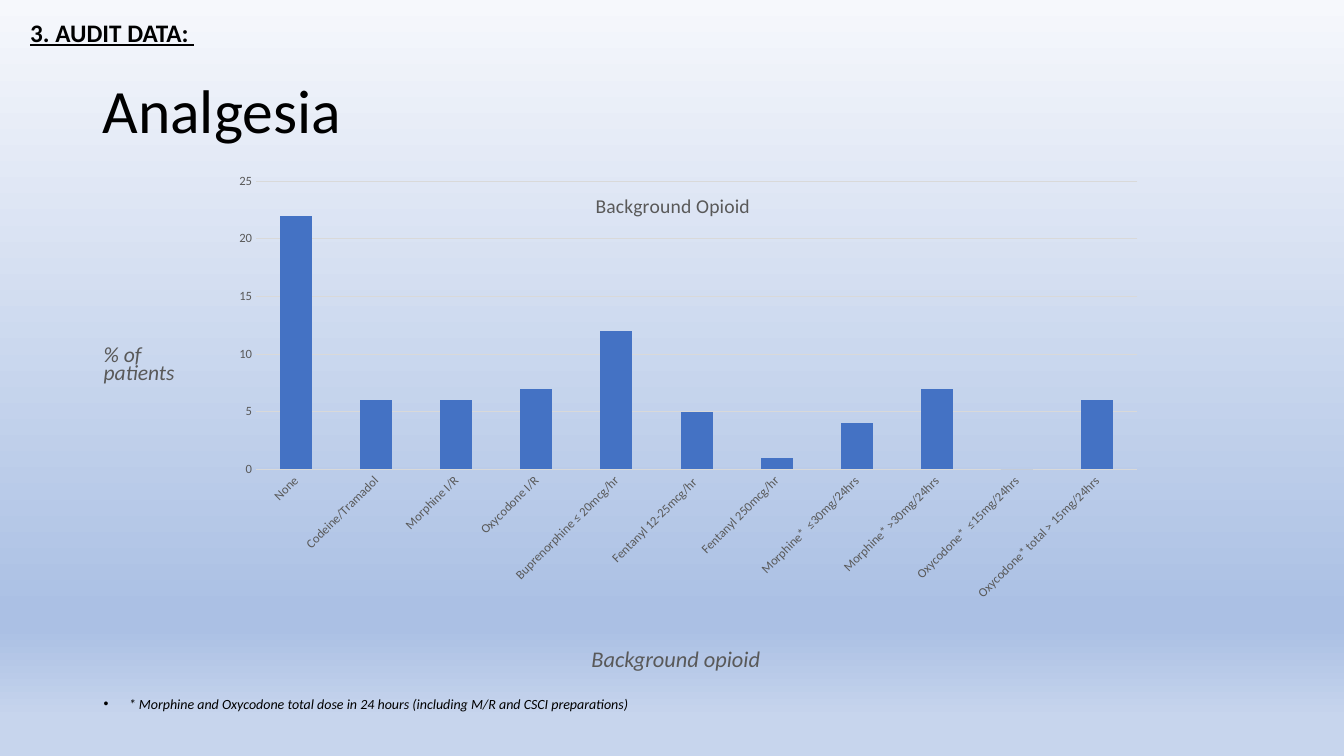
"""Build the audit data slide on background opioid analgesia."""
from lxml import etree
from pptx import Presentation
from pptx import util as u
from pptx.chart import data
from pptx.dml import color
from pptx.enum import chart as charts, text
from pptx.oxml import ns, parse_xml

FONT = "Calibri"
GREY = "595959"
PALE = "D9D9D9"


def rgb(value):
    return color.RGBColor.from_string(value)


def style(font, size, shade, italic=False, bold=False):
    font.name, font.size = FONT, u.Pt(size)
    font.italic, font.bold = italic, bold
    font.color.rgb = rgb(shade)


deck = Presentation()
deck.slide_width, deck.slide_height = u.Pt(960), u.Pt(540)
page = deck.slides.add_slide(deck.slide_layouts[6])

background = page.background.fill
background.gradient()
background.gradient_angle = 270
stops = page.element.find(".//" + ns.qn("a:gsLst"))
for stop in list(stops):
    stops.remove(stop)
for position, shade in [(0, "F6F8FC"), (81, "ABC0E4"), (83, "ABC0E4"), (95, "C7D5ED")]:
    stop = etree.SubElement(stops, ns.qn("a:gs"), pos=str(position * 1000))
    etree.SubElement(stop, ns.qn("a:srgbClr"), val=shade)

opioids = data.CategoryChartData()
opioids.categories = [
    "None", "Codeine/Tramadol", "Morphine I/R", "Oxycodone I/R",
    "Buprenorphine ≤ 20mcg/hr", "Fentanyl 12-25mcg/hr ", "Fentanyl 250mcg/hr",
    "Morphine*  ≤30mg/24hrs", "Morphine* >30mg/24hrs",
    "Oxycodone*  ≤15mg/24hrs", "Oxycodone* total > 15mg/24hrs",
]
opioids.add_series("Background Opioid", [22, 6, 6, 7, 12, 5, 1, 4, 7, 0, 6])
chart = page.shapes.add_chart(
    charts.XL_CHART_TYPE.COLUMN_STACKED,
    u.Pt(147.6), u.Pt(123.8), u.Pt(666), u.Pt(352), opioids,
).chart
style(chart.font, 10, "000000")
chart.has_legend = False
chart.has_title = True
chart.chart_title.text_frame.text = "Background Opioid"
style(chart.chart_title.text_frame.paragraphs[0].font, 14, GREY)
title_element = chart.chart_title._element
for overlay in title_element.findall(ns.qn("c:overlay")):
    overlay.set("val", "1")

plot = chart.plots[0]
plot.gap_width, plot.overlap = 150, 100
plot.vary_by_categories = False
bars = plot.series[0].format.fill
bars.solid()
bars.fore_color.rgb = rgb("4472C4")

for axis in (chart.category_axis, chart.value_axis):
    axis.major_tick_mark = axis.minor_tick_mark = charts.XL_TICK_MARK.NONE
    style(axis.tick_labels.font, 9, GREY)
chart.category_axis._element.find(".//" + ns.qn("a:bodyPr")).set("rot", "-2700000")
values = chart.value_axis
values.minimum_scale, values.maximum_scale, values.major_unit = 0, 25, 5
values.format.line.fill.background()
for line in (chart.category_axis.format.line, values.major_gridlines.format.line):
    line.color.rgb = rgb(PALE)
    line.width = u.Pt(0.75)

plot_area = chart._chartSpace.find(".//" + ns.qn("c:plotArea"))
for layout in plot_area.findall(ns.qn("c:layout")):
    plot_area.remove(layout)
plot_area.insert(0, parse_xml(
    f'<c:layout {ns.nsdecls("c")}><c:manualLayout><c:layoutTarget val="inner"/>'
    '<c:xMode val="edge"/><c:yMode val="edge"/><c:x val="0.053"/><c:y val="0.016"/>'
    '<c:w val="0.945"/><c:h val="0.585"/></c:manualLayout></c:layout>'
))

labels = [
    ("Analgesia", (66.2, 28.8, 828, 104.4), 44, "000000", False, 0.9),
    ("* Morphine and Oxycodone total dose in 24 hours (including M/R and CSCI preparations)",
     (67, 494.6, 828, 18.7), 10, "000000", True, 0.9),
    ("Background opioid", (415.4, 459.4, 164.2, 36), 16, GREY, True, 0.9),
    ("% of \vpatients", (67, 244.8, 69.8, 49.7), 15.4, GREY, True, 0.7),
    ("3. AUDIT DATA: ", (14.4, 8.6, 133.2, 28.8), 18, "000000", False, 1.0),
]
for words, place, size, shade, italic, spacing in labels:
    box = page.shapes.add_textbox(*map(u.Pt, place))
    frame = box.text_frame
    heading = words.startswith("3.")
    frame.word_wrap = not heading
    para = frame.paragraphs[0]
    para.text = words
    para.line_spacing = spacing
    if words.startswith("*"):
        properties = para._p.get_or_add_pPr()
        properties.set("marL", str(u.Pt(18)))
        properties.set("indent", str(u.Pt(-18)))
        etree.SubElement(properties, ns.qn("a:buFont"), typeface="Arial")
        etree.SubElement(properties, ns.qn("a:buChar"), char="•")
    style(para.font, size, shade, italic, heading)
    para.font.underline = heading
    if words == "Analgesia":
        frame.vertical_anchor = text.MSO_ANCHOR.MIDDLE

deck.save("out.pptx")
